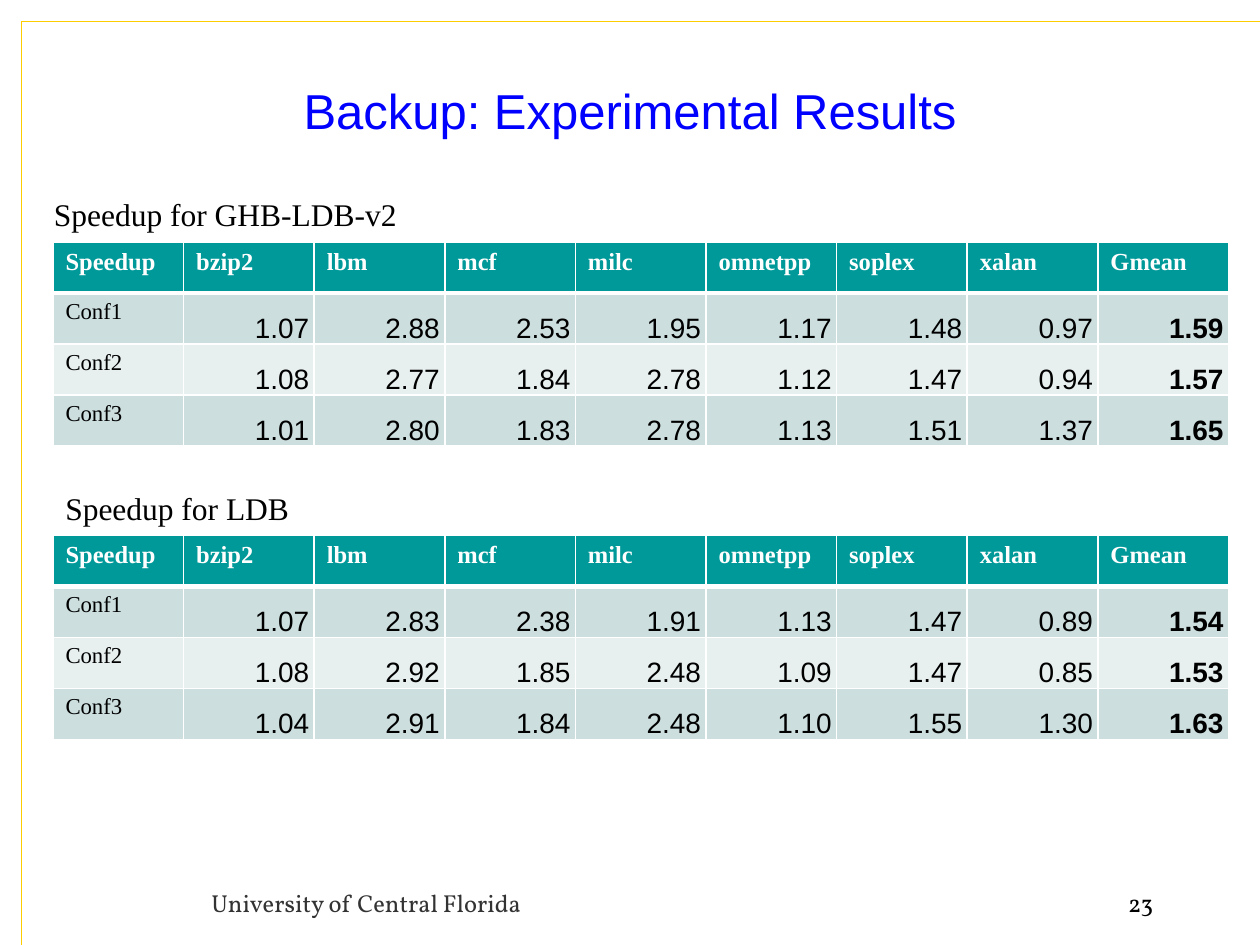
from lxml import etree
from pptx import Presentation, util as u
from pptx.dml.color import RGBColor
from pptx.enum import shapes, text
from pptx.oxml import ns

TEAL = RGBColor(0x00, 0x99, 0x99)
BANDS = (RGBColor(0xCC, 0xDE, 0xDE), RGBColor(0xE7, 0xEF, 0xEF))
GOLD = RGBColor(0xFF, 0xCC, 0x00)
BLUE = RGBColor(0x00, 0x00, 0xFF)
GREY = RGBColor(0x33, 0x33, 0x33)
BLACK = RGBColor(0x00, 0x00, 0x00)
WHITE = RGBColor(0xFF, 0xFF, 0xFF)
LEFT, CENTER, RIGHT = text.PP_ALIGN.LEFT, text.PP_ALIGN.CENTER, text.PP_ALIGN.RIGHT

TITLE = dict(name="Arial", size=u.Pt(28), color=BLUE)
CAPTION = dict(name="Times New Roman", size=u.Pt(18), color=BLACK)
FOOTER = dict(name="Vollkorn", size=u.Pt(14), color=GREY)
HEAD = dict(name="Times New Roman", size=u.Pt(14), bold=True, color=WHITE)
LABEL = dict(name="Times New Roman", size=u.Pt(13), bold=False, color=BLACK)
VALUE = dict(name="Arial", size=u.Pt(16), bold=False, color=BLACK)
MEAN = {**VALUE, "bold": True}
VALUE_CELL = dict(margin_left=u.Inches(0.04), margin_right=u.Inches(0.04),
                  margin_top=0, margin_bottom=0,
                  vertical_anchor=text.MSO_ANCHOR.BOTTOM)

HEADER = ["Speedup", "bzip2", "lbm", "mcf", "milc", "omnetpp", "soplex", "xalan", "Gmean"]
GHB_LDB = [
    ["Conf1", "1.07", "2.88", "2.53", "1.95", "1.17", "1.48", "0.97", "1.59"],
    ["Conf2", "1.08", "2.77", "1.84", "2.78", "1.12", "1.47", "0.94", "1.57"],
    ["Conf3", "1.01", "2.80", "1.83", "2.78", "1.13", "1.51", "1.37", "1.65"],
]
LDB = [
    ["Conf1", "1.07", "2.83", "2.38", "1.91", "1.13", "1.47", "0.89", "1.54"],
    ["Conf2", "1.08", "2.92", "1.85", "2.48", "1.09", "1.47", "0.85", "1.53"],
    ["Conf3", "1.04", "2.91", "1.84", "2.48", "1.10", "1.55", "1.30", "1.63"],
]


def write(tf, words, fmt, align=LEFT):
    """Write one formatted paragraph into a text frame."""
    p = tf.paragraphs[0]
    p.alignment = align
    r = p.add_run()
    r.text = words
    for key, value in fmt.items():
        if key == "color":
            r.font.color.rgb = value
        else:
            setattr(r.font, key, value)


def add_text(s, box, words, fmt, align=LEFT, wrap=True):
    """Add a text box at the given box in inches."""
    tf = s.shapes.add_textbox(*map(u.Inches, box)).text_frame
    tf.word_wrap = wrap
    write(tf, words, fmt, align)


def add_title(s, box, words):
    """Place and format the title placeholder."""
    sp = s.shapes.title
    sp.left, sp.top, sp.width, sp.height = map(u.Inches, box)
    sp.text_frame.vertical_anchor = text.MSO_ANCHOR.MIDDLE
    write(sp.text_frame, words, TITLE, CENTER)


def add_frame(s, x, y, right, bottom):
    """Draw the gold rules along the left and top edges."""
    for x2, y2, width in ((x, bottom, 0.75), (right, y, 1)):
        line = s.shapes.add_connector(shapes.MSO_CONNECTOR.STRAIGHT,
                                      *map(u.Inches, (x, y, x2, y2)))
        line.line.color.rgb = GOLD
        line.line.width = u.Pt(width)
        etree.SubElement(line._element.spPr, ns.qn("a:effectLst"))


def set_borders(cell, top, bottom):
    """Give a cell white borders, with top and bottom widths in points."""
    tcPr = cell._tc.get_or_add_tcPr()
    for side, width in (("L", 1), ("R", 1), ("T", top), ("B", bottom)):
        ln = etree.SubElement(tcPr, ns.qn(f"a:ln{side}"), w=str(u.Pt(width)))
        fill = etree.SubElement(ln, ns.qn("a:solidFill"))
        etree.SubElement(fill, ns.qn("a:srgbClr"), val=str(WHITE))


def add_speedups(s, box, rows):
    """Add a speedup table with a header, banded rows and a bold mean column."""
    data = [HEADER] + rows
    x, y, w, h = map(u.Inches, box)
    table = s.shapes.add_table(len(data), len(HEADER), x, y, w, h).table
    for i, row in enumerate(data):
        for j, words in enumerate(row):
            cell = table.cell(i, j)
            set_borders(cell, 3 if i == 1 else 1, 3 if i == 0 else 1)
            cell.fill.solid()
            cell.fill.fore_color.rgb = BANDS[(i - 1) % 2] if i else TEAL
            if i and j:
                for key, value in VALUE_CELL.items():
                    setattr(cell, key, value)
                fmt = MEAN if j == len(row) - 1 else VALUE
                write(cell.text_frame, words, fmt, RIGHT)
            else:
                write(cell.text_frame, words, LABEL if i else HEAD)


def add_footer(s, y, words, number):
    """Add the university name and the slide number."""
    add_text(s, (1.58, y, 6.83, 0.33), words, FOOTER)
    add_text(s, (8.33, y, 0.92, 0.33), number, {**FOOTER, "color": BLACK}, RIGHT)


def main():
    """Build and save the results slide."""
    prs = Presentation()
    prs.slide_width, prs.slide_height = u.Inches(10), u.Inches(7.5)
    s = prs.slides.add_slide(prs.slide_layouts[5])
    add_frame(s, 0.17, 0.17, 10, 7.5)
    add_title(s, (0.25, 0.5, 9.5, 0.75), "Backup: Experimental Results")
    add_footer(s, 7, "University of Central Florida", "23")
    add_text(s, (0.33, 1.5, 2.95, 0.4), "Speedup for GHB-LDB-v2", CAPTION, wrap=False)
    add_speedups(s, (0.42, 1.92, 9.33, 1.62), GHB_LDB)
    add_text(s, (0.42, 3.83, 2, 0.4), "Speedup for LDB", CAPTION, wrap=False)
    add_speedups(s, (0.42, 4.25, 9.33, 1.62), LDB)
    prs.save("out.pptx")


if __name__ == "__main__":
    main()
